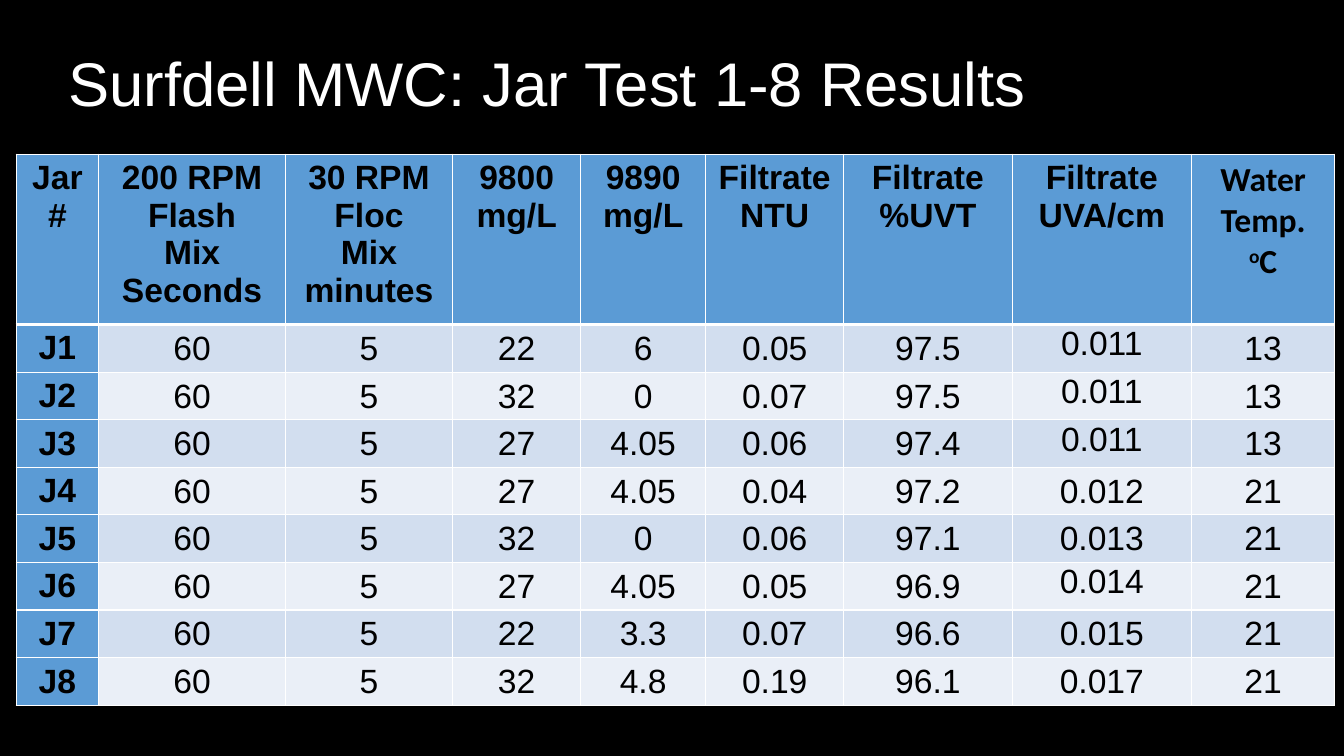
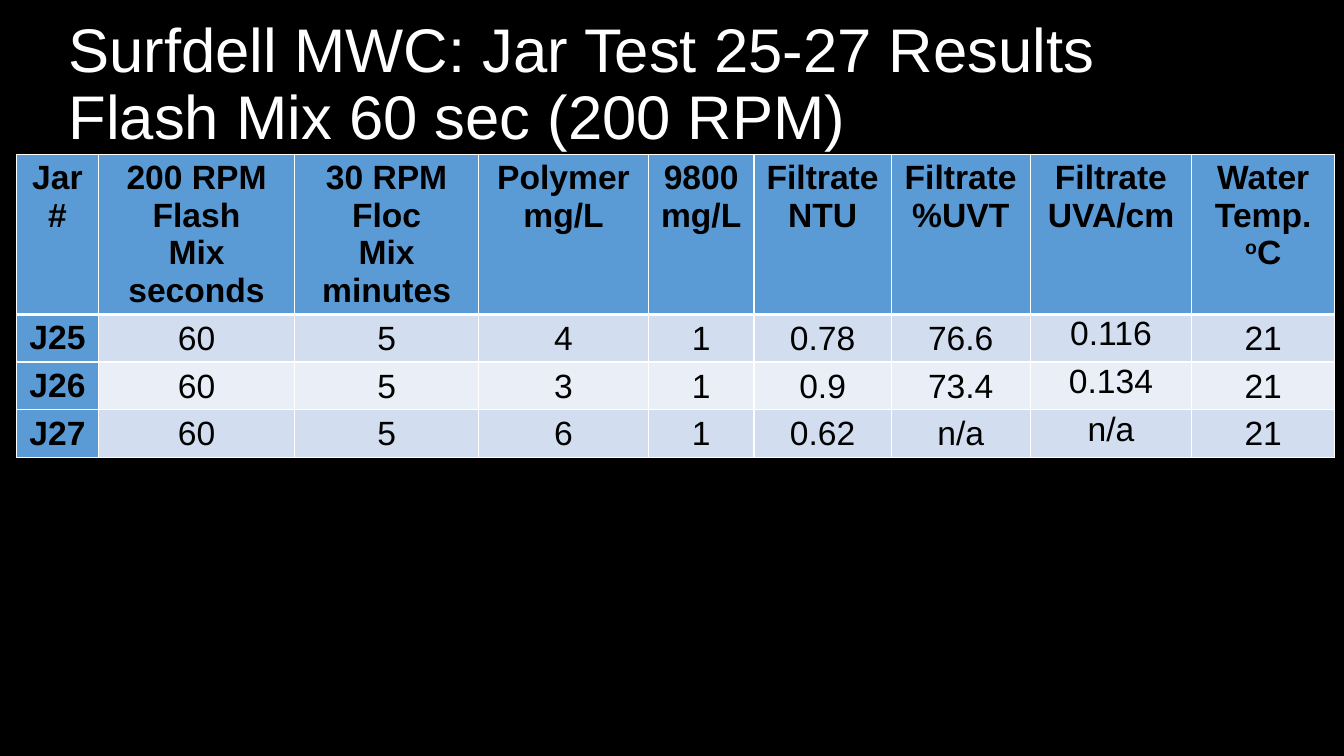
from dataclasses import dataclass

from lxml.etree import SubElement
from pptx import Presentation
from pptx.dml.color import RGBColor
from pptx.enum.text import MSO_ANCHOR, MSO_AUTO_SIZE, PP_ALIGN
from pptx.oxml.ns import qn
from pptx.util import Inches, Pt


# Theme: colours, fonts and type sizes
@dataclass(frozen=True)
class Theme:
    background: str = "000000"
    title: str = "FFFFFF"
    text: str = "000000"
    accent: str = "5B9BD5"
    bands: tuple = ("D2DEEF", "EAEFF7")
    border: str = "FFFFFF"
    font: str = "Arial"
    alternate_font: str = "Calibri"
    title_size: int = 44
    table_size: int = 24
    border_width: int = 1
    header_rule: int = 3


class ResultsDeck:
    def __init__(self, theme):
        self.theme = theme
        self.deck = Presentation()
        self.deck.slide_width = Inches(13.33)
        self.deck.slide_height = Inches(7.5)
        fill = self.deck.slide_master.background.fill
        fill.solid()
        fill.fore_color.rgb = RGBColor.from_string(theme.background)
        self.slide = None

    def add_slide(self, title):
        self.slide = self.deck.slides.add_slide(self.deck.slide_layouts[5])
        box = self.slide.shapes.title
        box.left, box.top = Inches(0.58), Inches(0.13)
        box.width, box.height = Inches(11.84), Inches(1.45)
        frame = box.text_frame
        frame.auto_size = MSO_AUTO_SIZE.NONE
        frame.vertical_anchor = MSO_ANCHOR.MIDDLE
        para = frame.paragraphs[0]
        para.text = title
        para.alignment = PP_ALIGN.LEFT
        para.line_spacing = 0.9
        for span in para.runs:
            self.style_span(span, self.theme.title_size, self.theme.title)

    def style_span(self, span, size, color, bold=False, font=None):
        span.font.name = font or self.theme.font
        span.font.size = Pt(size)
        span.font.bold = bold
        span.font.color.rgb = RGBColor.from_string(color)

    def style_cell(self, cell, text, fill, bold=False, font=None):
        cell.text_frame.text = text
        for para in cell.text_frame.paragraphs:
            para.alignment = PP_ALIGN.CENTER
            if para.text == "oC":
                # Degree sign set as a raised letter
                para.runs[0].text = "o"
                para.add_run().text = "C"
                para.runs[0].font._element.set("baseline", "30000")
            for span in para.runs:
                self.style_span(span, self.theme.table_size, self.theme.text, bold, font)
        cell.fill.solid()
        cell.fill.fore_color.rgb = RGBColor.from_string(fill)

    def add_borders(self, cell, top, bottom):
        properties = cell._tc.get_or_add_tcPr()
        side = self.theme.border_width
        for tag, width in (("lnL", side), ("lnR", side), ("lnT", top), ("lnB", bottom)):
            line = SubElement(properties, qn(f"a:{tag}"), w=str(Pt(width)))
            solid = SubElement(line, qn("a:solidFill"))
            SubElement(solid, qn("a:srgbClr"), val=self.theme.border)

    def add_results(self, headers, rows, widths, header_height, top_rows, last_font=None):
        """Draw a results table; top_rows are the rows whose UVA value sits at the top."""
        theme = self.theme
        row_height = 0.47
        table = self.slide.shapes.add_table(
            len(rows) + 1, len(headers), Inches(0.16), Inches(1.53),
            Inches(sum(widths)), Inches(header_height + row_height * len(rows))).table
        for column, width in zip(table.columns, widths):
            column.width = Inches(width)
        for index, row in enumerate(table.rows):
            row.height = Inches(row_height if index else header_height)

        # Header row
        last = len(headers) - 1
        for column, header in enumerate(headers):
            cell = table.cell(0, column)
            self.add_borders(cell, theme.border_width, theme.header_rule)
            font = last_font if column == last else None
            self.style_cell(cell, header, theme.accent, True, font)

        # Jar labels and banded values
        for index, values in enumerate(rows):
            top = theme.border_width if index else theme.header_rule
            for column, value in enumerate(values):
                cell = table.cell(index + 1, column)
                self.add_borders(cell, top, theme.border_width)
                if column == 0:
                    self.style_cell(cell, value, theme.accent, True)
                    continue
                self.style_cell(cell, value, theme.bands[index % 2])
                cell.margin_left = cell.margin_right = cell.margin_top = Inches(0.01)
                cell.margin_bottom = 0
                at_top = column == last - 1 and index in top_rows
                cell.vertical_anchor = MSO_ANCHOR.TOP if at_top else MSO_ANCHOR.MIDDLE


def result_headers(seconds, *products):
    return ["Jar\n#", f"200 RPM\nFlash\nMix\n{seconds}", "30 RPM\nFloc\nMix\nminutes",
            *(f"{product}\nmg/L" for product in products),
            "Filtrate\nNTU", "Filtrate\n%UVT", "Filtrate\nUVA/cm", "Water\nTemp.\noC"]


def jar_rows(first_jar, results):
    """Every jar is mixed for 60 seconds and then 5 minutes."""
    return [[f"J{jar}", "60", "5", *line.split()]
            for jar, line in enumerate(results, first_jar)]


def main():
    theme = Theme()
    results = ResultsDeck(theme)

    # Jars 1-8
    results.add_slide("Surfdell MWC: Jar Test 1-8 Results")
    results.add_results(
        result_headers("Seconds", "9800", "9890"),
        jar_rows(1, ["22 6 0.05 97.5 0.011 13",
                     "32 0 0.07 97.5 0.011 13",
                     "27 4.05 0.06 97.4 0.011 13",
                     "27 4.05 0.04 97.2 0.012 21",
                     "32 0 0.06 97.1 0.013 21",
                     "27 4.05 0.05 96.9 0.014 21",
                     "22 3.3 0.07 96.6 0.015 21",
                     "32 4.8 0.19 96.1 0.017 21"]),
        [0.82, 1.85, 1.66, 1.27, 1.24, 1.37, 1.67, 1.78, 1.42],
        header_height=1.69, top_rows={0, 1, 2, 5}, last_font=theme.alternate_font)

    # Jars 25-27
    results.add_slide("Surfdell MWC: Jar Test 25-27 Results\vFlash Mix 60 sec (200 RPM)")
    results.add_results(
        result_headers("seconds", "Polymer", "9800"),
        jar_rows(25, ["4 1 0.78 76.6 0.116 21",
                      "3 1 0.9 73.4 0.134 21",
                      "6 1 0.62 n/a n/a 21"]),
        [0.82, 1.94, 1.83, 1.68, 1.05, 1.36, 1.38, 1.6, 1.42],
        header_height=1.59, top_rows={0, 1, 2})

    results.deck.save("out.pptx")


if __name__ == "__main__":
    main()
